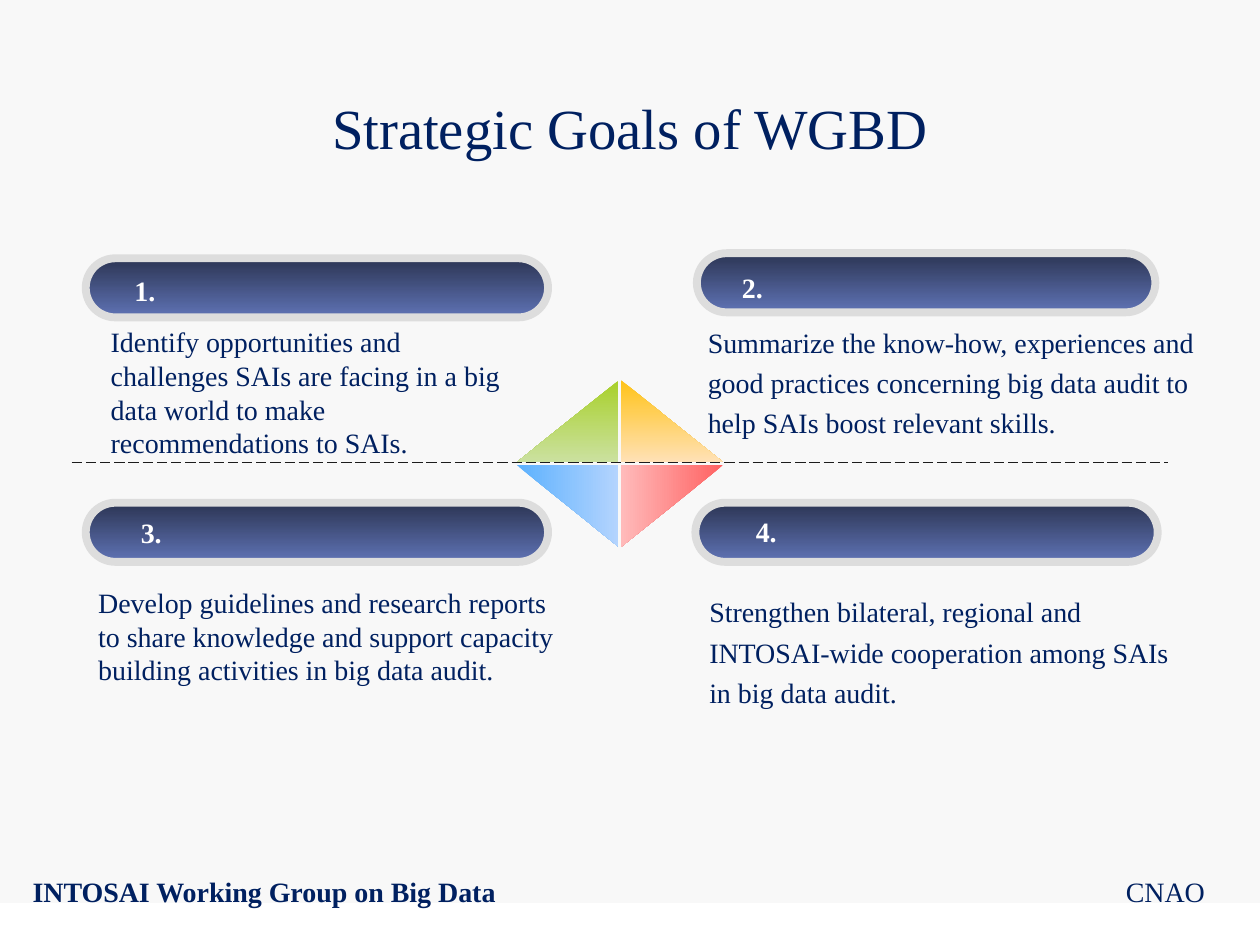
from dataclasses import dataclass

from lxml import etree
from pptx import Presentation
from pptx.dml.color import RGBColor
from pptx.enum.dml import MSO_LINE
from pptx.enum.shapes import MSO_CONNECTOR, MSO_SHAPE
from pptx.enum.text import MSO_ANCHOR, MSO_AUTO_SIZE, PP_ALIGN
from pptx.oxml.ns import qn
from pptx.util import Pt

RECTANGLE = MSO_SHAPE.RECTANGLE
PILL = MSO_SHAPE.ROUNDED_RECTANGLE
TRIANGLE = MSO_SHAPE.RIGHT_TRIANGLE
STRAIGHT = MSO_CONNECTOR.STRAIGHT
LONG_DASH = MSO_LINE.LONG_DASH
LEFT, CENTER, RIGHT = PP_ALIGN.LEFT, PP_ALIGN.CENTER, PP_ALIGN.RIGHT
MIDDLE, TOP = MSO_ANCHOR.MIDDLE, MSO_ANCHOR.TOP
NO_AUTOFIT = MSO_AUTO_SIZE.NONE
DOWNWARD = 270  # gradient angle, counter-clockwise


@dataclass(frozen=True)
class Theme:
    font: str = "Times New Roman"
    title_size: float = 32.4
    text_size: float = 16
    navy: str = "002060"
    white: str = "FFFFFF"
    dash: str = "1C1C1C"
    bar_edge: str = "DDDDDD"
    panel: tuple = ("F8F8F8", "FBFBFB")
    bar: tuple = ("2C3554", "5F73B5")
    green: tuple = ("A8D02A", "CBE1A0")
    yellow: tuple = ("FFC319", "FFE1B6")
    red: tuple = ("FF6161", "FFBABA")
    blue: tuple = ("5CB1FE", "B4D4FE")


class PageBuilder:
    def __init__(self, page, theme):
        self.page = page
        self.theme = theme

    def set_words(self, frame, words, size, color, bold=False, align=LEFT, spacing=None):
        frame.text = words
        para = frame.paragraphs[0]
        para.alignment = align
        if spacing:
            para.line_spacing = spacing
        for span in para.runs:
            span.font.name = self.theme.font
            span.font.size = Pt(size)
            span.font.bold = bold
            span.font.color.rgb = RGBColor.from_string(color)

    def title(self, words, place):
        box = self.page.shapes.title
        box.left, box.top, box.width, box.height = map(Pt, place)
        box.text_frame.vertical_anchor = MIDDLE
        box.text_frame.auto_size = NO_AUTOFIT
        self.set_words(box.text_frame, words, self.theme.title_size, self.theme.navy, align=CENTER)

    def text(self, words, place, color=None, wrap=True, **style):
        box = self.page.shapes.add_textbox(*map(Pt, place))
        box.text_frame.word_wrap = wrap
        box.text_frame.vertical_anchor = TOP
        self.set_words(box.text_frame, words, self.theme.text_size, color or self.theme.navy, **style)

    def shape(self, kind, place, colors):
        shape = self.page.shapes.add_shape(kind, *map(Pt, place))
        shape.shadow.inherit = False
        shape.fill.gradient()
        shape.fill.gradient_angle = DOWNWARD
        for stop, color, position in zip(shape.fill.gradient_stops, colors, (0, 1)):
            stop.color.rgb = RGBColor.from_string(color)
            stop.position = position
        shape.line.fill.background()
        return shape

    def panel(self, place):
        panel = self.shape(RECTANGLE, place, self.theme.panel)
        self.page.shapes.title.element.addprevious(panel.element)

    def bar(self, place):
        bar = self.shape(PILL, place, self.theme.bar)
        bar.adjustments[0] = 0.5
        bar.line.color.rgb = RGBColor.from_string(self.theme.bar_edge)
        bar.line.width = Pt(4.5)

    def triangle(self, center, size, colors, rotation=0, flipped=False):
        (x, y), (width, height) = center, size
        place = (x - width / 2, y - height / 2, width, height)
        triangle = self.shape(TRIANGLE, place, colors)
        triangle.rotation = rotation
        if flipped:
            triangle.element.spPr.find(qn("a:xfrm")).set("flipH", "1")

    def dashed_line(self, left, right, y):
        line = self.page.shapes.add_connector(STRAIGHT, Pt(left), Pt(y), Pt(right), Pt(y))
        line.line.color.rgb = RGBColor.from_string(self.theme.dash)
        line.line.width = Pt(0.75)
        line.line.dash_style = LONG_DASH
        etree.SubElement(line.element.spPr, qn("a:effectLst"))


# Number, bar, number box, number wraps, wording, wording box, line spacing
GOALS = [
    ("1.", (49, 147.6, 264.2, 33.8), (69.8, 152.6, 28.8, 46.8), False,
     "Identify opportunities and challenges SAIs are facing in a big data world "
     "to make recommendations to SAIs.",
     (56.2, 182.2, 249, 103), None),
    ("2.", (398.2, 144.7, 262, 33.8), (416.9, 151.2, 251.3, 28), True,
     "Summarize the know-how, experiences and good practices concerning big data "
     "audit to help SAIs boost relevant skills.",
     (397.4, 178.6, 314.6, 76.3), 1.2),
    ("3.", (49, 287.3, 264.2, 33.8), (73.4, 290.9, 28.8, 28), False,
     "Develop guidelines and research reports to share knowledge and support "
     "capacity building activities in big data audit.",
     (49, 331.2, 282.2, 83.5), None),
    ("4.", (397.4, 287.3, 264.2, 33.8), (424.8, 290.2, 27.4, 26), False,
     "Strengthen bilateral, regional and INTOSAI-wide cooperation among SAIs "
     "in big data audit.",
     (398.2, 332.6, 284.4, 76.3), 1.2),
]


def main():
    deck = Presentation()
    deck.slide_width, deck.slide_height = Pt(720), Pt(540)
    theme = Theme()
    builder = PageBuilder(deck.slides.add_slide(deck.slide_layouts[5]), theme)

    # Background, footer and title
    builder.panel((0, 0, 720, 516))
    builder.text("INTOSAI Working Group on Big Data", (11.5, 496, 282.2, 29), bold=True)
    builder.text("CNAO", (527.8, 496, 167.8, 29), align=RIGHT)
    builder.title("Strategic Goals of WGBD", (36, 49.7, 648, 46))

    # Central diamond of four triangles
    width, height = 58.3, 46.8
    left, right = 324.4, 384.1
    upper, lower = 240.8, 289.1
    builder.triangle((left, upper), (width, height), theme.green, flipped=True)
    builder.triangle((right, upper), (width, height), theme.yellow)
    builder.triangle((right, lower), (height, width), theme.red, rotation=90)
    builder.triangle((left, lower), (height, width), theme.blue, rotation=270, flipped=True)
    builder.dashed_line(41, 667.4, 264.2)

    # Four goals
    for number, bar, number_box, wrap, words, words_box, spacing in GOALS:
        builder.bar(bar)
        builder.text(number, number_box, theme.white, wrap, bold=True)
        builder.text(words, words_box, spacing=spacing)

    deck.save("out.pptx")


if __name__ == "__main__":
    main()
